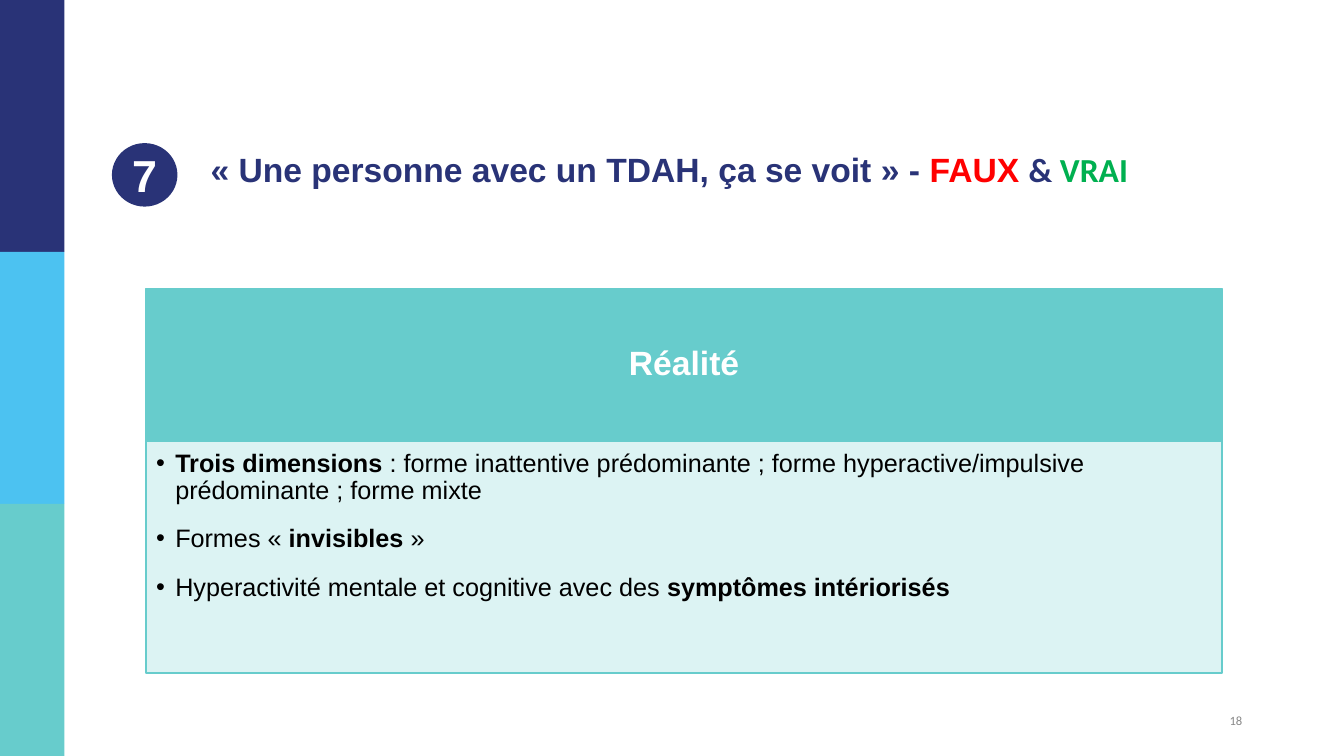
from dataclasses import dataclass

from lxml.etree import SubElement
from pptx import Presentation
from pptx.dml.color import RGBColor
from pptx.enum.shapes import MSO_SHAPE as Preset
from pptx.enum.text import MSO_ANCHOR as Anchor, PP_ALIGN as Align
from pptx.oxml.ns import qn
from pptx.shapes.autoshape import Shape
from pptx.slide import Slide
from pptx.text.text import TextFrame, _Paragraph as Paragraph
from pptx.util import Emu, Pt

PX = 9144  # 100 px to the inch

COLORS = {
    "navy": "293377", "sky": "4CC2F1", "teal": "67CCCC", "mint": "D9F2F2",
    "white": "FFFFFF", "black": "000000", "red": "FF0000",
    "green": "00B050", "grey": "888888",
}


@dataclass(frozen=True)
class Box:
    left: int
    top: int
    width: int
    height: int

    def emu(self) -> tuple[Emu, ...]:
        return tuple(Emu(n * PX) for n in (self.left, self.top, self.width, self.height))


@dataclass(frozen=True)
class Style:
    size: int
    color: str
    bold: bool = False
    font: str = "Arial"
    align: Align = Align.LEFT
    spacing: float | None = None


@dataclass(frozen=True)
class Piece:
    text: str
    color: str | None = None
    bold: bool | None = None
    font: str | None = None


def rgb(name: str) -> RGBColor:
    return RGBColor.from_string(COLORS[name])


def add_panel(slide: Slide, box: Box, fill: str, preset: Preset = Preset.RECTANGLE,
              line: float = 0) -> Shape:
    """Add a flat filled shape; a line width above zero gives it a teal outline."""
    panel = slide.shapes.add_shape(preset, *box.emu())
    panel.shadow.inherit = False
    panel.fill.solid()
    panel.fill.fore_color.rgb = rgb(fill)
    if line:
        panel.line.color.rgb = rgb("teal")
        panel.line.width = Pt(line)
    else:
        panel.line.fill.background()
    return panel


def set_frame(frame: TextFrame, anchor: Anchor,
              insets: tuple[int, int, int, int] = (10, 5, 10, 5)) -> None:
    frame.word_wrap = True
    frame.vertical_anchor = anchor
    (frame.margin_left, frame.margin_top,
     frame.margin_right, frame.margin_bottom) = (Emu(n * PX) for n in insets)


def write(paragraph: Paragraph, pieces: list[Piece], style: Style) -> None:
    paragraph.alignment = style.align
    if style.spacing:
        paragraph.line_spacing = style.spacing
    font = paragraph.font
    font.name, font.size, font.bold = style.font, Pt(style.size), style.bold
    font.color.rgb = rgb(style.color)
    for piece in pieces:
        run = paragraph.add_run()
        run.text = piece.text
        if piece.color:
            run.font.color.rgb = rgb(piece.color)
        if piece.bold is not None:
            run.font.bold = piece.bold
        if piece.font:
            run.font.name = piece.font


def add_bullet(paragraph: Paragraph, indent: int) -> None:
    properties = paragraph._p.get_or_add_pPr()
    properties.set("marL", str(indent * PX))
    properties.set("indent", str(-indent * PX))
    SubElement(properties, qn("a:buFont"), typeface="Arial")
    SubElement(properties, qn("a:buChar"), char="•")


def set_opacity(panel: Shape, percent: int) -> None:
    color = panel._element.spPr.find(qn("a:solidFill"))[0]
    SubElement(color, qn("a:alpha"), val=str(percent * 1000))


BAND_COLORS = ["navy", "sky", "teal"]
BAND_WIDTH, BAND_HEIGHT = 64, 250

NUMBER = Style(32, "white", bold=True, align=Align.CENTER)
CLAIM = Style(24, "navy", bold=True, align=Align.JUSTIFY, spacing=0.9)
HEADING = Style(24, "white", bold=True, align=Align.CENTER, spacing=0.9)
FACT = Style(18, "black", spacing=0.9)
PAGE = Style(9, "grey", font="Calibri", align=Align.RIGHT)

CLAIM_PIECES = [
    Piece("« Une personne avec un TDAH, ça se voit » - "),
    Piece("FAUX ", color="red"),
    Piece("& ", font="Calibri"),
    Piece("VRAI", color="green", font="Calibri"),
]
FACTS = [
    [Piece("Trois dimensions ", bold=True),
     Piece(": forme inattentive prédominante ; forme hyperactive/impulsive "
           "prédominante ; forme mixte")],
    [Piece("Formes « "), Piece("invisibles", bold=True), Piece(" »")],
    [Piece("Hyperactivité mentale et cognitive avec des "),
     Piece("symptômes intériorisés", bold=True)],
]


def main() -> None:
    deck = Presentation()
    deck.slide_width, deck.slide_height = Emu(1333 * PX), Emu(750 * PX)
    slide = deck.slides.add_slide(deck.slide_layouts[6])

    for row, color in enumerate(BAND_COLORS):
        add_panel(slide, Box(0, row * BAND_HEIGHT, BAND_WIDTH, BAND_HEIGHT), color)

    number = add_panel(slide, Box(111, 142, 65, 63), "navy", Preset.OVAL).text_frame
    set_frame(number, Anchor.MIDDLE)
    write(number.paragraphs[0], [Piece("7")], NUMBER)

    claim = slide.shapes.add_textbox(*Box(199, 142, 981, 63).emu()).text_frame
    set_frame(claim, Anchor.TOP, (10, 10, 10, 10))
    write(claim.paragraphs[0], CLAIM_PIECES, CLAIM)

    heading = add_panel(slide, Box(145, 286, 1067, 151), "teal", line=1).text_frame
    set_frame(heading, Anchor.MIDDLE, (19, 11, 19, 11))
    write(heading.paragraphs[0], [Piece("Réalité")], HEADING)

    reality = add_panel(slide, Box(145, 437, 1067, 231), "mint", line=1.5)
    set_opacity(reality, 90)
    facts = reality.text_frame
    set_frame(facts, Anchor.TOP, (10, 10, 14, 16))
    for index, pieces in enumerate(FACTS):
        fact = facts.add_paragraph() if index else facts.paragraphs[0]
        add_bullet(fact, 19)
        fact.space_after = Pt(15)
        write(fact, pieces, FACT)

    page = slide.shapes.add_textbox(*Box(942, 695, 300, 40).emu()).text_frame
    set_frame(page, Anchor.MIDDLE)
    write(page.paragraphs[0], [Piece("18")], PAGE)

    deck.save("out.pptx")


if __name__ == "__main__":
    main()
